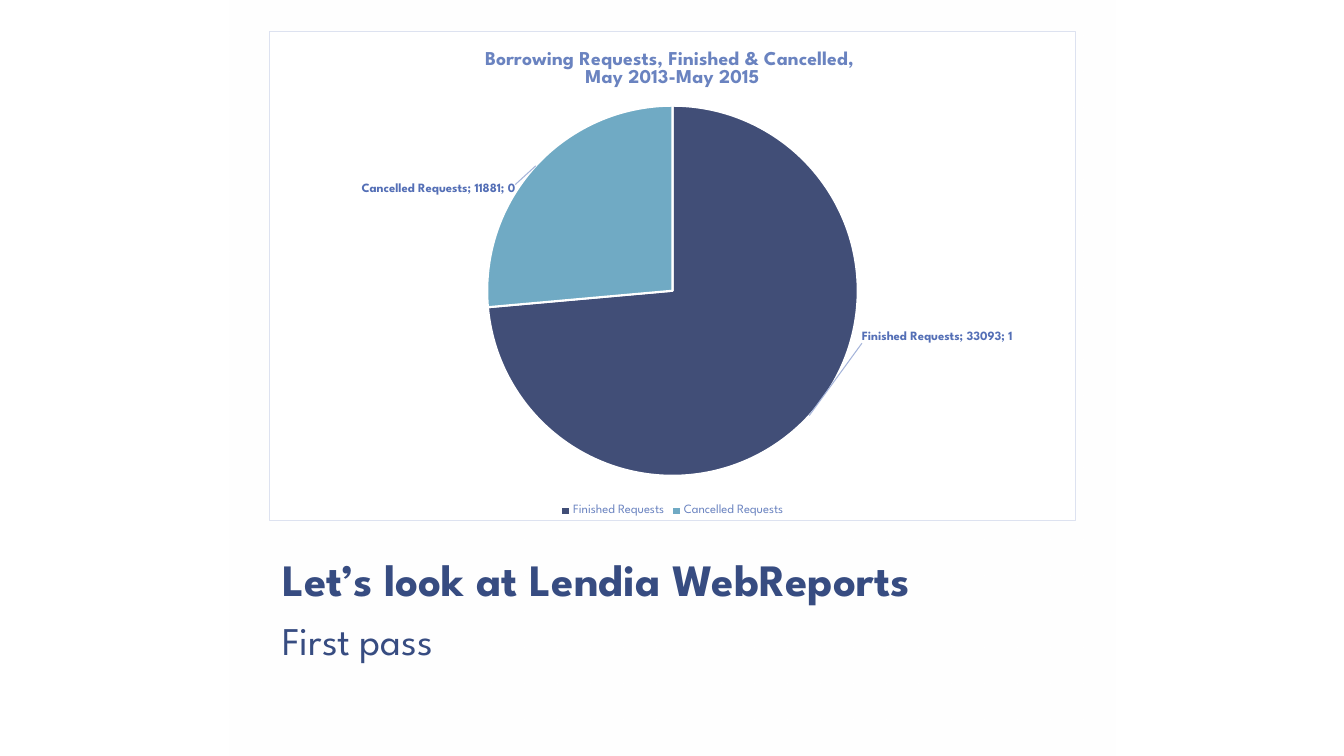
from copy import deepcopy
from lxml.etree import SubElement
from pptx import Presentation
from pptx.chart.data import CategoryChartData
from pptx.dml.color import RGBColor
from pptx.enum.chart import XL_CHART_TYPE, XL_LABEL_POSITION, XL_LEGEND_POSITION
from pptx.enum.shapes import MSO_SHAPE
from pptx.enum.text import MSO_ANCHOR
from pptx.oxml import parse_xml
from pptx.oxml.ns import nsdecls, qn
from pptx.util import Inches, Pt

FONT = "League Spartan"
COLORS = {"white": "FFFFFF", "heading": "374C81", "chart title": "6A83C0", "label": "546FB6",
          "border": "DDE2F0", "leader": "A5B4DA"}
PANEL = (2.28, 0, 8.78, 7.5)
CHART_BOX = (2.67, 0.31, 8, 4.86)
TEXTS = [
    {"text": "Let’s look at Lendia WebReports", "box": (2.67, 5.25, 8, 0.83),
     "size": 32, "bold": True, "anchor": MSO_ANCHOR.BOTTOM, "spacing": 0.85},
    {"text": "First pass", "box": (2.67, 6.08, 8, 0.89),
     "size": 28, "bold": False, "anchor": MSO_ANCHOR.TOP, "spacing": 0.95},
]
CHART_TITLE = ["Borrowing Requests, Finished & Cancelled, ", "May 2013-May 2015"]
SLICES = [
    {"name": "Finished Requests", "value": 33093, "color": "414E77", "shift": (0.06, -0.18)},
    {"name": "Cancelled Requests", "value": 11881, "color": "70AAC4", "shift": (-0.02, 0.07)},
]
PLOT_LAYOUT = {"x": 0.27, "y": 0.15, "w": 0.46, "h": 0.76}


def color(name):
    return RGBColor.from_string(COLORS[name])


def set_font(font, size, color_name, bold=False):
    values = {"name": FONT, "size": Pt(size), "bold": bold}
    for attribute, value in values.items():
        setattr(font, attribute, value)
    font.color.rgb = color(color_name)


def manual_layout(values, target=""):
    parts = "".join(f'<c:{key} val="{value}"/>' for key, value in values.items())
    return parse_xml(f'<c:layout {nsdecls("c")}><c:manualLayout>{target}{parts}'
                     '</c:manualLayout></c:layout>')


def line_properties(color_name, width, fill=""):
    return parse_xml(f'<c:spPr {nsdecls("c", "a")}>{fill}<a:ln w="{Pt(width)}"><a:solidFill>'
                     f'<a:srgbClr val="{COLORS[color_name]}"/></a:solidFill></a:ln></c:spPr>')


def add_panel(slide):
    panel = slide.shapes.add_shape(MSO_SHAPE.RECTANGLE, *map(Inches, PANEL))
    panel.shadow.inherit = False
    panel.line.fill.background()
    panel.fill.gradient()
    panel.fill.gradient_angle = 230
    for stop, position in zip(panel.fill.gradient_stops, (0, 1)):
        stop.color.rgb = color("white")
        stop.position = position
    last_color = panel._element.spPr.findall(".//" + qn("a:srgbClr"))[-1]
    SubElement(last_color, qn("a:alpha"), val="55000")


def add_text(slide, content):
    frame = slide.shapes.add_textbox(*map(Inches, content["box"])).text_frame
    values = {"word_wrap": True, "vertical_anchor": content["anchor"],
              "margin_left": Inches(0.13), "margin_right": Inches(0.13),
              "margin_top": Inches(0.07), "margin_bottom": Inches(0.07)}
    for attribute, value in values.items():
        setattr(frame, attribute, value)
    paragraph = frame.paragraphs[0]
    paragraph.line_spacing = content["spacing"]
    run = paragraph.add_run()
    run.text = content["text"]
    set_font(run.font, content["size"], "heading", content["bold"])


def add_labels(plot):
    plot.has_data_labels = True
    labels = plot.data_labels
    set_font(labels.font, 9, "label", True)
    values = {"number_format": "0", "number_format_is_linked": False,
              "position": XL_LABEL_POSITION.OUTSIDE_END, "show_value": True,
              "show_category_name": True, "show_percentage": True}
    for attribute, value in values.items():
        setattr(labels, attribute, value)
    element = labels._element
    for leader in element.findall(qn("c:showLeaderLines")):
        element.remove(leader)
    SubElement(element, qn("c:separator")).text = "; "
    shared = [deepcopy(child) for child in element]
    SubElement(element, qn("c:showLeaderLines"), val="1")
    SubElement(element, qn("c:leaderLines")).append(line_properties("leader", 0.75))
    for index, piece in enumerate(SLICES):
        label = parse_xml(f'<c:dLbl {nsdecls("c")}><c:idx val="{index}"/></c:dLbl>')
        label.append(manual_layout(dict(zip("xy", piece["shift"]))))
        label.extend(deepcopy(shared))
        element.insert(index, label)
    plot._element.remove(element)
    series = plot.series[0]._element
    series.find(qn("c:cat")).addprevious(element)


def add_pie(slide):
    data = CategoryChartData()
    data.categories = [piece["name"] for piece in SLICES]
    data.add_series("Series 1", [piece["value"] for piece in SLICES])
    chart = slide.shapes.add_chart(XL_CHART_TYPE.PIE, *map(Inches, CHART_BOX), data).chart
    set_font(chart.font, 10, "heading")
    chart.has_title = True
    frame = chart.chart_title.text_frame
    for index, text in enumerate(CHART_TITLE):
        paragraph = frame.add_paragraph() if index else frame.paragraphs[0]
        run = paragraph.add_run()
        run.text = text
        set_font(run.font, 14, "chart title", True)
    chart.chart_title.include_in_layout = False
    chart.has_legend = True
    chart.legend.position = XL_LEGEND_POSITION.BOTTOM
    chart.legend.include_in_layout = False
    set_font(chart.legend.font, 9, "chart title")
    plot = chart.plots[0]
    plot.vary_by_categories = True
    for index, piece in enumerate(SLICES):
        point_format = plot.series[0].points[index].format
        point_format.fill.solid()
        point_format.fill.fore_color.rgb = RGBColor.from_string(piece["color"])
        point_format.line.color.rgb = color("white")
        point_format.line.width = Pt(1.5)
    add_labels(plot)
    plot_area = plot._element.getparent()
    for layout in plot_area.findall(qn("c:layout")):
        plot_area.remove(layout)
    modes = {"xMode": "edge", "yMode": "edge"}
    plot_area.insert(0, manual_layout({**modes, **PLOT_LAYOUT}, '<c:layoutTarget val="inner"/>'))
    white_fill = f'<a:solidFill><a:srgbClr val="{COLORS["white"]}"/></a:solidFill>'
    chart_element = plot_area.getparent()
    chart_element.addnext(line_properties("border", 0.75, white_fill))


def main():
    presentation = Presentation()
    presentation.slide_width = Inches(13.33)
    presentation.slide_height = Inches(7.5)
    slide = presentation.slides.add_slide(presentation.slide_layouts[6])
    slide.background.fill.solid()
    slide.background.fill.fore_color.rgb = color("white")
    add_panel(slide)
    for content in TEXTS:
        add_text(slide, content)
    add_pie(slide)
    presentation.save("out.pptx")


if __name__ == "__main__":
    main()
